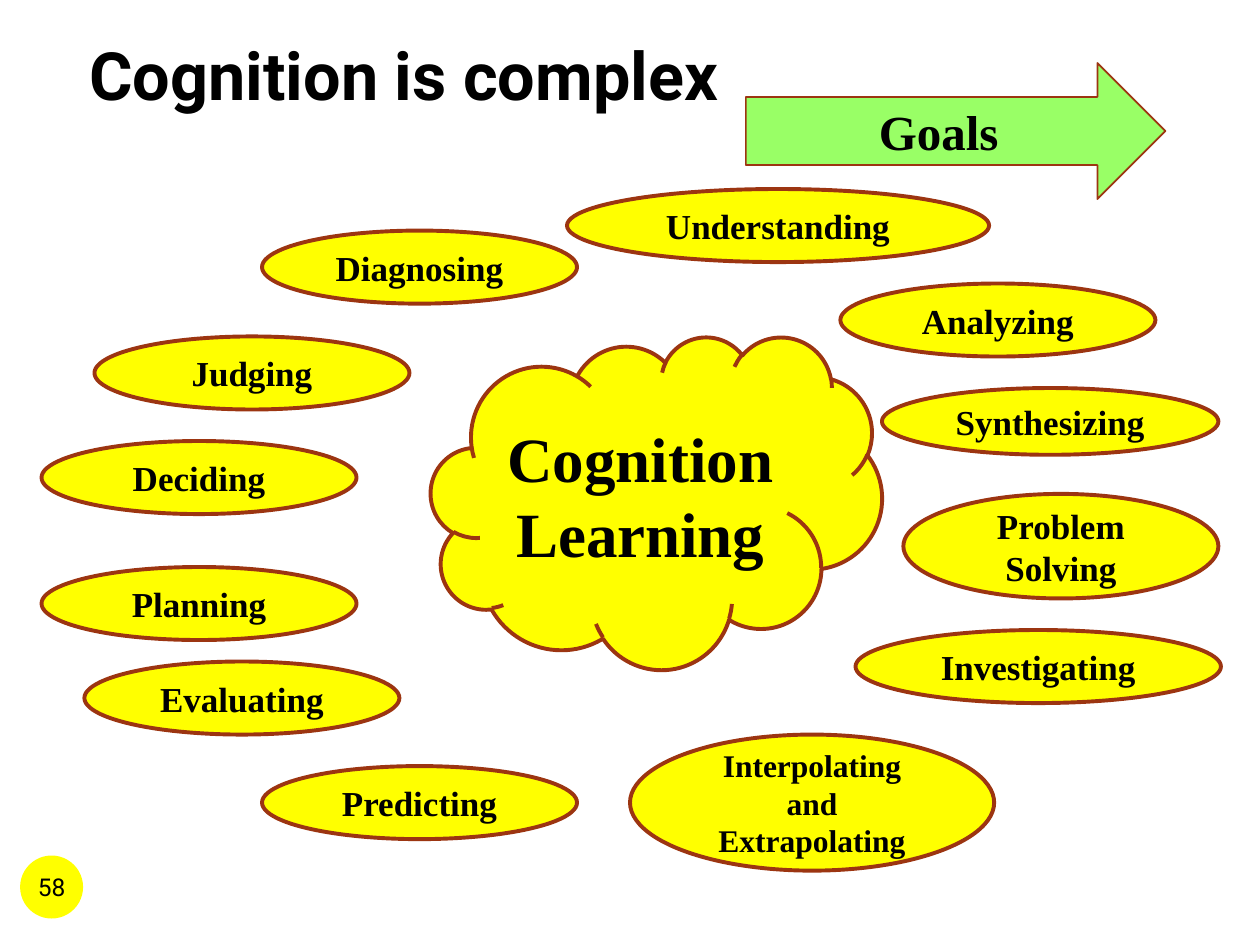
from pptx import Presentation
from pptx.dml.color import RGBColor
from pptx.enum.shapes import MSO_SHAPE
from pptx.enum.text import MSO_ANCHOR, MSO_AUTO_SIZE, PP_ALIGN
from pptx.util import Inches, Pt

OVAL, CLOUD, ARROW = MSO_SHAPE.OVAL, MSO_SHAPE.CLOUD, MSO_SHAPE.RIGHT_ARROW
MIDDLE, BOTTOM = MSO_ANCHOR.MIDDLE, MSO_ANCHOR.BOTTOM
LEFT, CENTER = PP_ALIGN.LEFT, PP_ALIGN.CENTER

COLORS = {"text": "000000", "yellow": "FFFF00", "green": "99FF66", "outline": "9C3511"}
SANS, SERIF = "Roboto", "Times New Roman"
OVAL_WIDTH, OVAL_HEIGHT = 2.5, 0.58

# Ovals of the usual size: text, left, top
SKILLS = [
    ("Evaluating", 0.67, 5.25),
    ("Diagnosing", 2.08, 1.83),
    ("Judging", 0.75, 2.67),
    ("Deciding", 0.33, 3.5),
    ("Planning", 0.33, 4.5),
    ("Predicting", 2.08, 6.08),
    ("Analyzing", 6.67, 2.25),
]

# Ovals fitted to their text: text, left, top, width, height, text size
FITTED_SKILLS = [
    ("Investigating", 6.79, 5, 2.9, OVAL_HEIGHT, 20),
    ("Problem Solving", 7.17, 3.92, OVAL_WIDTH, 0.83, 20),
    ("Interpolating and Extrapolating", 5, 5.83, 2.89, 1.08, 18),
    ("Understanding", 4.5, 1.5, 3.35, OVAL_HEIGHT, 20),
    ("Synthesizing", 7, 3.08, 2.67, 0.53, 20),
]


def color(name):
    return RGBColor.from_string(COLORS[name])


def write(frame, text, size, font, bold=True, align=CENTER):
    frame.text = text
    for para in frame.paragraphs:
        para.alignment = align
        for span in para.runs:
            span.font.size = Pt(size)
            span.font.name = font
            span.font.bold = bold
            span.font.color.rgb = color("text")


def set_margins(frame, left, top, right, bottom):
    frame.margin_left, frame.margin_top = Inches(left), Inches(top)
    frame.margin_right, frame.margin_bottom = Inches(right), Inches(bottom)


def add_title(page, text):
    title = page.shapes.title
    title.left, title.top = Inches(0.61), Inches(0.4)
    title.width, title.height = Inches(5.23), Inches(0.6)
    frame = title.text_frame
    frame.auto_size = MSO_AUTO_SIZE.NONE
    frame.vertical_anchor = BOTTOM
    set_margins(frame, 0.1, 0.05, 0.1, 0.1)
    write(frame, text, 38, SANS, align=LEFT)


def add_figure(page, kind, left, top, width, height, fill="yellow", line_width=2.25):
    figure = page.shapes.add_shape(
        kind, Inches(left), Inches(top), Inches(width), Inches(height))
    figure.shadow.inherit = False
    figure.fill.solid()
    figure.fill.fore_color.rgb = color(fill)
    if line_width:
        figure.line.color.rgb = color("outline")
        figure.line.width = Pt(line_width)
    else:
        figure.line.fill.background()
    figure.text_frame.word_wrap = True
    figure.text_frame.vertical_anchor = MIDDLE
    return figure


def add_skill(page, text, left, top, width=OVAL_WIDTH, height=OVAL_HEIGHT, size=20):
    oval = add_figure(page, OVAL, left, top, width, height)
    write(oval.text_frame, text, size, SERIF)


def add_page_number(page, number):
    badge = add_figure(page, OVAL, 0.16, 6.79, 0.5, 0.5, line_width=0)
    frame = badge.text_frame
    frame.word_wrap = False
    set_margins(frame, 0, 0, 0, 0)
    write(frame, number, 14, SANS, bold=False)


def main():
    deck = Presentation()
    deck.slide_width, deck.slide_height = Inches(10), Inches(7.5)
    page = deck.slides.add_slide(deck.slide_layouts[5])

    add_title(page, "Cognition is complex")
    add_page_number(page, "58")

    # Central idea
    cloud = add_figure(page, CLOUD, 3.42, 2.67, 3.58, 2.64)
    write(cloud.text_frame, "Cognition\nLearning", 36, SERIF)

    # Ring of skills around it
    for skill in SKILLS + FITTED_SKILLS:
        add_skill(page, *skill)

    # Direction of the goals
    arrow = add_figure(page, ARROW, 5.92, 0.5, 3.33, 1.08, "green", 1)
    write(arrow.text_frame, "Goals", 28, SERIF)

    deck.save("out.pptx")


if __name__ == "__main__":
    main()
